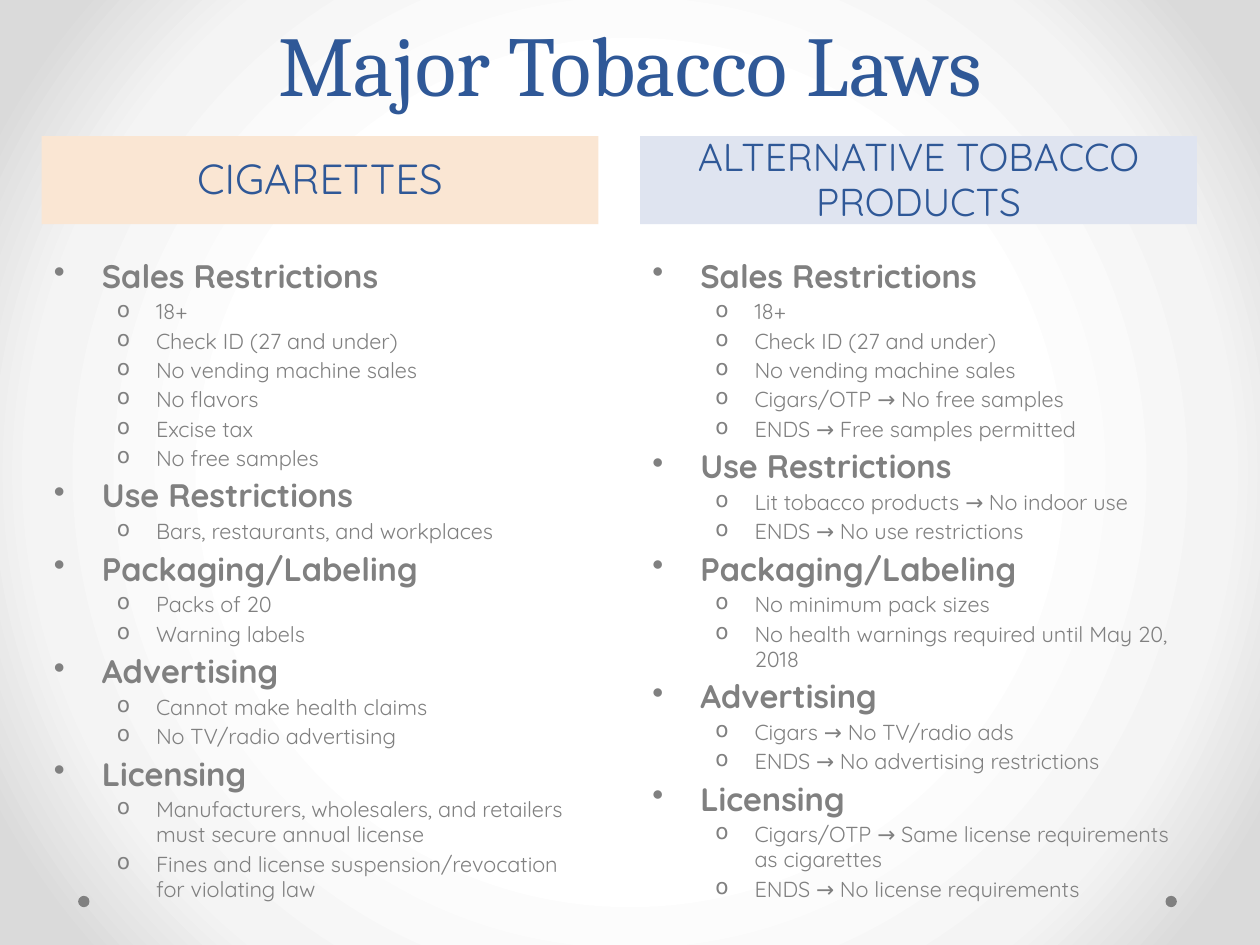
from lxml.etree import SubElement
from pptx import Presentation
from pptx.dml.color import RGBColor
from pptx.enum.shapes import MSO_SHAPE
from pptx.enum.text import MSO_ANCHOR, PP_ALIGN
from pptx.oxml import parse_xml
from pptx.oxml.ns import nsdecls, qn
from pptx.util import Inches, Pt

BLUE = RGBColor(0x2F, 0x58, 0x97)
GRAY = RGBColor(0x80, 0x80, 0x80)
PEACH = RGBColor(0xFA, 0xE6, 0xD3)
LILAC = RGBColor(0xDF, 0xE4, 0xF0)
SERIF, SANS = "Cambria", "Quicksand"

TITLE = "Major Tobacco Laws"
STOPS = [(50, "FFFFFF"), (76, "F4F4F4"), (92, "DADADA")]
DOTS = [0.62, 9.25]

# left, header, header size, header fill, list height, laws by topic
COLUMNS = [
    (0.33, "CIGARETTES", 24, PEACH, 5.08, {
        "Sales Restrictions": [
            "18+", "Check ID (27 and under)", "No vending machine sales",
            "No flavors", "Excise tax", "No free samples"],
        "Use Restrictions": ["Bars, restaurants, and workplaces"],
        "Packaging/Labeling": ["Packs of 20", "Warning labels"],
        "Advertising": ["Cannot make health claims", "No TV/radio advertising"],
        "Licensing": [
            "Manufacturers, wholesalers, and retailers must secure annual license",
            "Fines and license suspension/revocation for violating law"],
    }),
    (5.08, "ALTERNATIVE TOBACCO PRODUCTS", 22.2, LILAC, 5.25, {
        "Sales Restrictions": [
            "18+", "Check ID (27 and under)", "No vending machine sales",
            "Cigars/OTP → No free samples", "ENDS → Free samples permitted"],
        "Use Restrictions": [
            "Lit tobacco products → No indoor use", "ENDS → No use restrictions"],
        "Packaging/Labeling": [
            "No minimum pack sizes",
            "No health warnings required until May 20, 2018"],
        "Advertising": [
            "Cigars → No TV/radio ads", "ENDS → No advertising restrictions"],
        "Licensing": [
            "Cigars/OTP → Same license requirements as cigarettes",
            "ENDS → No license requirements"],
    }),
]
WIDTH = 4.42

# size, bold, text indent, bullet offset, bullet
LEVELS = [(18.6, True, 0.38, -0.38, "•"), (12.4, False, 0.81, -0.31, "o")]


def style(para, text, size, color, name=SANS, bold=False):
    para.text = text
    font = para.font
    font.size, font.bold, font.name = Pt(size), bold, name
    font.color.rgb = color


def add_back(slide):
    stops = "".join(
        f'<a:gs pos="{pos * 1000}"><a:srgbClr val="{color}"/></a:gs>'
        for pos, color in STOPS)
    slide.element.cSld.insert(0, parse_xml(
        f'<p:bg {nsdecls("p", "a")}><p:bgPr><a:gradFill rotWithShape="1">'
        f'<a:gsLst>{stops}</a:gsLst><a:path path="circle">'
        '<a:fillToRect l="50000" t="50000" r="50000" b="50000"/></a:path>'
        '</a:gradFill><a:effectLst/></p:bgPr></p:bg>'))


def add_solid(slide, kind, box, color):
    shape = slide.shapes.add_shape(kind, *map(Inches, box))
    shape.shadow.inherit = False
    shape.fill.solid()
    shape.fill.fore_color.rgb = color
    shape.line.fill.background()
    return shape


def add_text(slide, box):
    frame = slide.shapes.add_textbox(*map(Inches, box)).text_frame
    frame.word_wrap = True
    return frame


def add_header(slide, left, text, size, color):
    shape = add_solid(slide, MSO_SHAPE.RECTANGLE, (left, 1.08, WIDTH, 0.7), color)
    frame = shape.text_frame
    frame.vertical_anchor = MSO_ANCHOR.MIDDLE
    para = frame.paragraphs[0]
    style(para, text, size, BLUE)
    para.alignment, para.line_spacing = PP_ALIGN.CENTER, 0.97


def add_item(para, text, level):
    size, bold, indent, offset, mark = LEVELS[level]
    style(para, text, size, GRAY, bold=bold)
    para.level = level
    para.line_spacing = 0.96
    para.space_before = Pt(size * 0.2)
    props = para._p.get_or_add_pPr()
    props.set("marL", str(Inches(indent)))
    props.set("indent", str(Inches(offset)))
    bullet = SubElement(props, qn("a:buChar"))
    bullet.set("char", mark)
    props.insert_element_before(bullet, "a:tabLst", "a:defRPr", "a:extLst")


def add_laws(slide, left, height, laws):
    frame = add_text(slide, (left, 2, WIDTH, height))
    items = [item for topic, rules in laws.items()
             for item in [(topic, 0)] + [(rule, 1) for rule in rules]]
    for i, (text, level) in enumerate(items):
        para = frame.add_paragraph() if i else frame.paragraphs[0]
        add_item(para, text, level)


def main():
    deck = Presentation()
    deck.slide_width, deck.slide_height = Inches(10), Inches(7.5)
    slide = deck.slides.add_slide(deck.slide_layouts[6])
    add_back(slide)
    for left in DOTS:
        add_solid(slide, MSO_SHAPE.OVAL, (left, 7.11, 0.09, 0.09), GRAY)

    frame = add_text(slide, (0.5, 0.17, 9, 0.78))
    frame.vertical_anchor = MSO_ANCHOR.BOTTOM
    para = frame.paragraphs[0]
    style(para, TITLE, 48.6, BLUE, SERIF)
    para.alignment, para.line_spacing = PP_ALIGN.CENTER, Pt(58)

    for left, head, size, color, height, laws in COLUMNS:
        add_header(slide, left, head, size, color)
        add_laws(slide, left, height, laws)
    deck.save("out.pptx")


if __name__ == "__main__":
    main()
